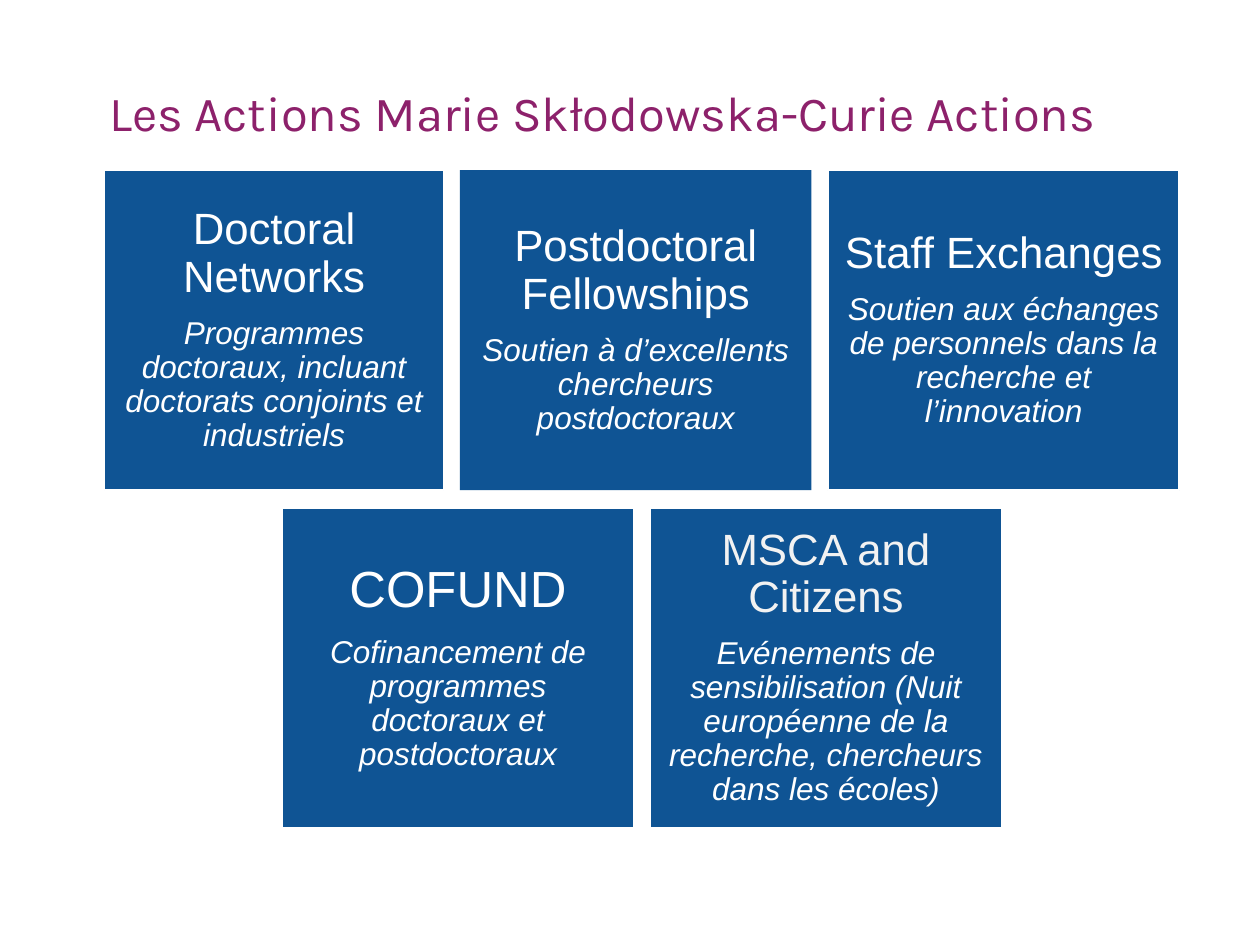
import pptx
import pptx.util
import pptx.dml.color
import pptx.enum.shapes
import pptx.enum.text
from pptx.util import Inches, Pt

RGBColor = pptx.dml.color.RGBColor
PLUM = RGBColor(0x8D, 0x21, 0x6B)
BLUE = RGBColor(0x0F, 0x54, 0x94)
WHITE = RGBColor(0xFF, 0xFF, 0xFF)
PALE = RGBColor(0xF2, 0xF2, 0xF2)

CARD_WIDTH, CARD_HEIGHT = 2.79, 2.54
CARD_STEP = 2.92
TOP_ROW, BOTTOM_ROW = 1.35, 4.03


class ActionsSlide:
    """Holds the style and the current slide."""

    heading_font = "Karla"
    body_font = "Arial"
    summary_size = 18
    gap_ratio = 0.35

    def __init__(self, slide):
        self.slide = slide

    def set_frame(self, frame, inset_x, inset_y):
        frame.word_wrap = True
        frame.vertical_anchor = pptx.enum.text.MSO_ANCHOR.MIDDLE
        frame.margin_left = frame.margin_right = Inches(inset_x)
        frame.margin_top = frame.margin_bottom = Inches(inset_y)

    def set_text(self, paragraph, text, font, size, color, italic=False):
        paragraph.text = text
        style = paragraph.runs[0].font
        style.name, style.size, style.italic = font, Pt(size), italic
        style.color.rgb = color

    def heading(self, text, left, top, width, height):
        box = self.slide.shapes.add_textbox(
            Inches(left), Inches(top), Inches(width), Inches(height))
        self.set_frame(box.text_frame, 0.1, 0.05)
        paragraph = box.text_frame.paragraphs[0]
        self.set_text(paragraph, text, self.heading_font, 28, PLUM)
        paragraph.line_spacing = 0.8

    def card(self, name, summary, left, top, width=CARD_WIDTH, outlined=True,
             name_size=25, name_color=WHITE, inset=0.1):
        card = self.slide.shapes.add_shape(
            pptx.enum.shapes.MSO_SHAPE.RECTANGLE,
            Inches(left), Inches(top), Inches(width), Inches(CARD_HEIGHT))
        card.shadow.inherit = False
        card.fill.solid()
        card.fill.fore_color.rgb = BLUE
        if outlined:
            card.line.color.rgb = WHITE
            card.line.width = Pt(1)
        else:
            card.line.fill.background()

        frame = card.text_frame
        self.set_frame(frame, inset, inset)
        lines = [(name, name_size, name_color, False),
                 (summary, self.summary_size, WHITE, True)]
        for index, (text, size, color, italic) in enumerate(lines):
            paragraph = frame.add_paragraph() if index else frame.paragraphs[0]
            self.set_text(paragraph, text, self.body_font, size, color, italic)
            paragraph.alignment = pptx.enum.text.PP_ALIGN.CENTER
            paragraph.line_spacing = 0.9
            paragraph.space_after = Pt(round(size * self.gap_ratio, 2))


def main():
    presentation = pptx.Presentation()
    presentation.slide_width = Inches(10)
    presentation.slide_height = Inches(7.5)
    actions = ActionsSlide(
        presentation.slides.add_slide(presentation.slide_layouts[6]))

    # Heading
    actions.heading("Les Actions Marie Skłodowska-Curie Actions",
                    0.77, 0.67, 8.76, 0.52)

    # Top row: three actions
    fellowships_left = 3.65
    actions.card("Doctoral Networks",
                 "Programmes doctoraux, incluant doctorats conjoints "
                 "et industriels",
                 0.83, TOP_ROW, width=2.69)
    actions.card("Postdoctoral Fellowships",
                 "Soutien à d’excellents chercheurs postdoctoraux",
                 fellowships_left, TOP_ROW, outlined=False)
    actions.card("Staff Exchanges",
                 "Soutien aux échanges de personnels dans la recherche "
                 "et l’innovation",
                 fellowships_left + CARD_STEP, TOP_ROW)

    # Bottom row: two actions
    cofund_left = 2.24
    actions.card("COFUND",
                 "Cofinancement de programmes doctoraux et postdoctoraux",
                 cofund_left, BOTTOM_ROW, name_size=29, inset=0.12)
    actions.card("MSCA and Citizens",
                 "Evénements de sensibilisation (Nuit européenne de la "
                 "recherche, chercheurs dans les écoles)",
                 cofund_left + CARD_STEP, BOTTOM_ROW, name_color=PALE)

    presentation.save("out.pptx")


if __name__ == "__main__":
    main()
